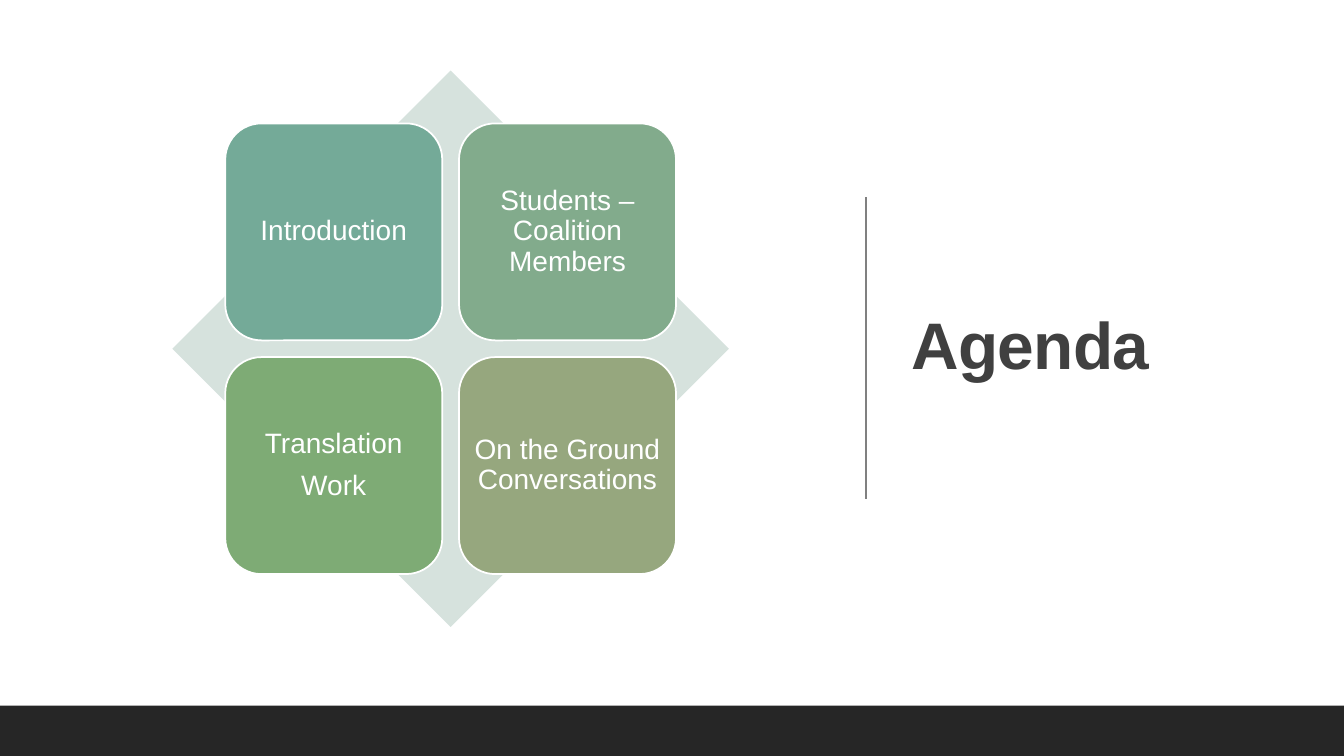
from lxml import etree
from pptx import Presentation
from pptx.dml.color import RGBColor
from pptx.enum.shapes import MSO_CONNECTOR, MSO_SHAPE
from pptx.enum.text import MSO_ANCHOR, PP_ALIGN
from pptx.oxml.ns import qn
from pptx.util import Inches, Pt

RECTANGLE, DIAMOND = MSO_SHAPE.RECTANGLE, MSO_SHAPE.DIAMOND
ROUNDED, STRAIGHT = MSO_SHAPE.ROUNDED_RECTANGLE, MSO_CONNECTOR.STRAIGHT
MIDDLE, CENTER, LEFT = MSO_ANCHOR.MIDDLE, PP_ALIGN.CENTER, PP_ALIGN.LEFT

WHITE = RGBColor(0xFF, 0xFF, 0xFF)
INK = RGBColor(0x40, 0x40, 0x40)
RULE = RGBColor(0x80, 0x80, 0x80)
BAND = RGBColor(0x26, 0x26, 0x26)
MIST = RGBColor(0xD6, 0xE2, 0xDD)
TEAL = RGBColor(0x74, 0xAA, 0x98)
SAGE = RGBColor(0x82, 0xAB, 0x8C)
GREEN = RGBColor(0x7E, 0xAB, 0x75)
OLIVE = RGBColor(0x96, 0xA7, 0x7E)

WIDTH, HEIGHT = Inches(13.33), Inches(7.5)
FONT = "Arial"
CARD_SHARE, STEP_SHARE = 0.39, 0.42
AGENDA = [
    (["Introduction"], TEAL),
    (["Students –Coalition Members"], SAGE),
    (["Translation", "Work"], GREEN),
    (["On the Ground Conversations"], OLIVE),
]


def add_filled(shapes, kind, box, color):
    """Add a borderless shape with a solid fill and no shadow."""
    shape = shapes.add_shape(kind, *map(int, box))
    shape.shadow.inherit = False
    shape.fill.solid()
    shape.fill.fore_color.rgb = color
    shape.line.fill.background()
    return shape


def write_lines(frame, lines, size, color, align, bold=False, after=0):
    """Write one paragraph per line, vertically centred in the frame."""
    frame.word_wrap = True
    frame.vertical_anchor = MIDDLE
    for index, line in enumerate(lines):
        para = frame.add_paragraph() if index else frame.paragraphs[0]
        para.alignment = align
        para.line_spacing = 0.9
        para.space_after = Pt(after)
        span = para.add_run()
        span.text = line
        span.font.name = FONT
        span.font.size = Pt(size)
        span.font.bold = bold
        span.font.color.rgb = color


def add_matrix(page, left, top, side):
    """Draw the diamond with a two-by-two grid of agenda cards over it."""
    shapes = page.shapes.add_group_shape().shapes
    add_filled(shapes, DIAMOND, (left, top, side, side), MIST)
    card_side, step = side * CARD_SHARE, side * STEP_SHARE
    margin = (side - step - card_side) / 2
    for index, (lines, color) in enumerate(AGENDA):
        row, column = divmod(index, 2)
        box = (left + margin + column * step, top + margin + row * step,
               card_side, card_side)
        card = add_filled(shapes, ROUNDED, box, color)
        card.line.color.rgb = WHITE
        card.line.width = Pt(1.25)
        frame = card.text_frame
        frame.margin_left = frame.margin_right = 0
        frame.margin_top = frame.margin_bottom = 0
        write_lines(frame, lines, 20, WHITE, CENTER, after=8)


def add_heading(page, left, top, width, height):
    """Draw the heading with a vertical rule on its left."""
    box = page.shapes.add_textbox(left, top, width, height)
    write_lines(box.text_frame, ["Agenda"], 47, INK, LEFT, bold=True)
    box.text_frame.paragraphs[0].runs[0].font._element.set("spc", "-50")
    rule_x = left - Inches(0.35)
    center, half = top + height // 2, Inches(1.5)
    rule = page.shapes.add_connector(
        STRAIGHT, rule_x, center - half, rule_x, center + half)
    rule.line.color.rgb = RULE
    rule.line.width = Pt(1)
    etree.SubElement(rule._element.spPr, qn("a:effectLst"))


def add_footer(page, height):
    """Draw the dark band along the bottom of the slide."""
    add_filled(page.shapes, RECTANGLE, (0, HEIGHT - height, WIDTH, height), BAND)


def main():
    """Build the agenda slide and save it."""
    deck = Presentation()
    deck.slide_width, deck.slide_height = WIDTH, HEIGHT
    page = deck.slides.add_slide(deck.slide_layouts[6])
    add_heading(page, Inches(8.94), Inches(0.69), Inches(3.69), Inches(5.53))
    add_footer(page, Inches(0.5))
    add_matrix(page, Inches(1.71), Inches(0.7), Inches(5.52))
    deck.save("out.pptx")


if __name__ == "__main__":
    main()
